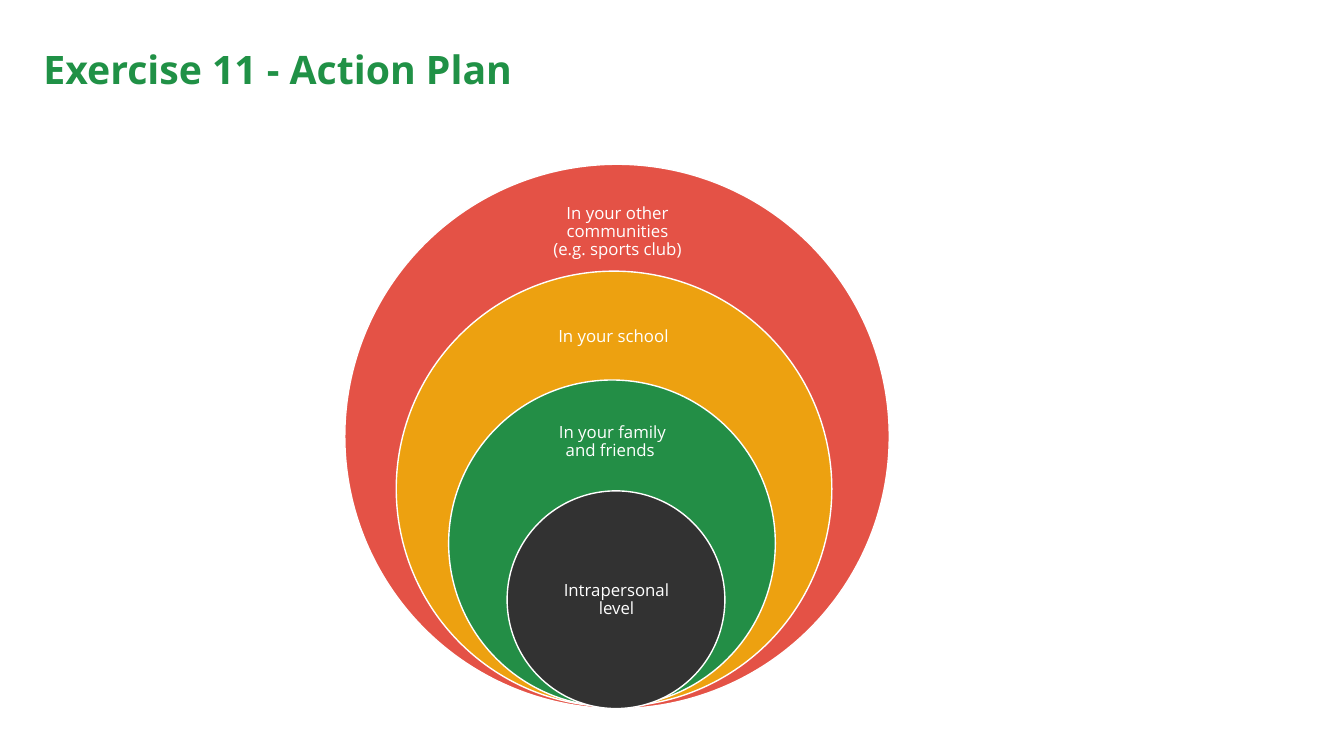
"""Build the action plan slide with its nested circles of influence."""
from dataclasses import dataclass

from pptx import Presentation
from pptx import util as u
from pptx.dml.color import RGBColor
from pptx.enum import shapes, text


@dataclass(frozen=True)
class Theme:
    font: str = "Open Sans"
    title_size: int = 28
    label_size: int = 12
    title: str = "209146"
    white: str = "FFFFFF"
    community: str = "E45246"
    school: str = "EDA110"
    family: str = "238E46"
    personal: str = "323232"


def write(box, words, *, font, size, color, bold=False, align=None, inset=0.09):
    frame = box.text_frame
    frame.word_wrap = True
    frame.auto_size = text.MSO_AUTO_SIZE.NONE
    frame.vertical_anchor = text.MSO_ANCHOR.MIDDLE
    frame.margin_left = frame.margin_right = u.Inches(inset)
    frame.margin_top = frame.margin_bottom = u.Inches(inset)
    para = frame.paragraphs[0]
    para.alignment = align
    para.line_spacing = 0.9
    span = para.add_run()
    span.text = words
    span.font.name = font
    span.font.size = u.Pt(size)
    span.font.bold = bold
    span.font.color.rgb = RGBColor.from_string(color)


class SlideBuilder:
    def __init__(self, page, theme):
        self.page = page
        self.theme = theme

    def title(self, words, left, top, width, height):
        box = self.page.shapes.title
        box.left, box.top = u.Inches(left), u.Inches(top)
        box.width, box.height = u.Inches(width), u.Inches(height)
        write(box, words, font=self.theme.font, size=self.theme.title_size,
              color=self.theme.title, bold=True,
              align=text.PP_ALIGN.LEFT, inset=0.06)

    def circle(self, left, top, diameter, color):
        shape = self.page.shapes.add_shape(
            shapes.MSO_SHAPE.OVAL, u.Inches(left), u.Inches(top),
            u.Inches(diameter), u.Inches(diameter))
        shape.shadow.inherit = False
        shape.fill.solid()
        shape.fill.fore_color.rgb = RGBColor.from_string(color)
        shape.line.color.rgb = RGBColor.from_string(self.theme.white)
        shape.line.width = u.Pt(1)

    def label(self, words, left, top, width, height):
        box = self.page.shapes.add_textbox(
            u.Inches(left), u.Inches(top), u.Inches(width), u.Inches(height))
        write(box, words, font=self.theme.font, size=self.theme.label_size,
              color=self.theme.white, align=text.PP_ALIGN.CENTER)


def main():
    theme = Theme()
    deck = Presentation()
    deck.slide_width, deck.slide_height = u.Inches(13.33), u.Inches(7.5)
    page = deck.slides.add_slide(deck.slide_layouts[5])
    builder = SlideBuilder(page, theme)
    builder.title("Exercise 11 - Action Plan", 0.37, 0.32, 12.6, 0.78)

    levels = [
        ("In your other communities (e.g. sports club)", theme.community,
         (3.42, 1.63), (5.37, 1.9, 1.51, 0.81)),
        ("In your school", theme.school,
         (3.93, 2.69), (5.33, 2.95, 1.51, 0.78)),
        ("In your family and friends ", theme.family,
         (4.45, 3.77), (5.32, 4.02, 1.51, 0.73)),
        ("Intrapersonal level", theme.personal,
         (5.03, 4.87), (5.35, 5.41, 1.53, 1.08)),
    ]
    for index, (words, color, corner, label_area) in enumerate(levels):
        builder.circle(*corner, 1.08 * (5 - index), color)
        builder.label(words, *label_area)

    deck.save("out.pptx")


if __name__ == "__main__":
    main()
